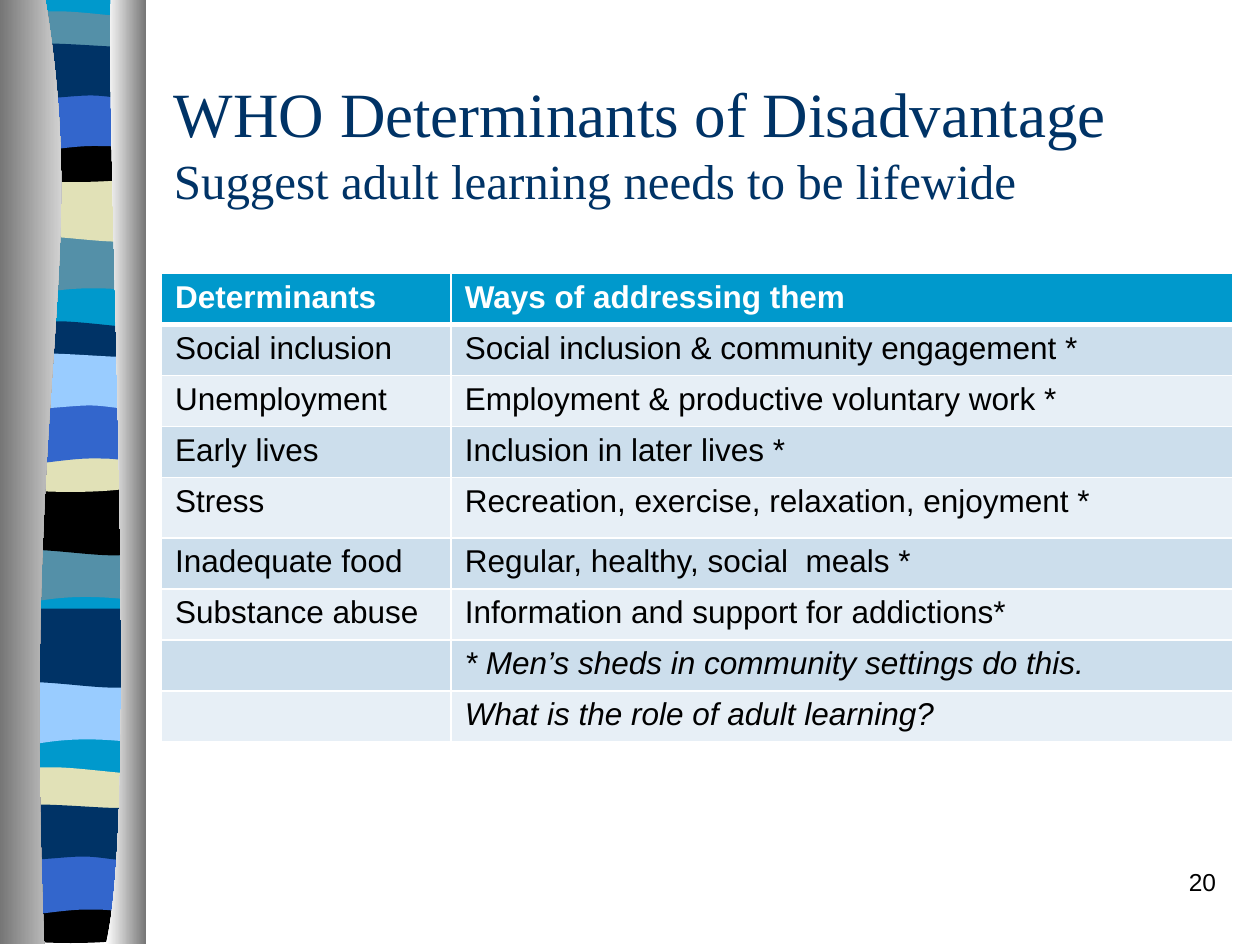
from lxml import etree
from pptx import Presentation
from pptx.dml.color import RGBColor
from pptx.enum.text import MSO_ANCHOR, MSO_AUTO_SIZE, PP_ALIGN
from pptx.oxml.ns import qn
from pptx.util import Pt

SCALE = 9144
SWELL = 5
MIDDLE = MSO_ANCHOR.MIDDLE
FIXED = MSO_AUTO_SIZE.NONE
LEFT = PP_ALIGN.LEFT
RIGHT = PP_ALIGN.RIGHT
SERIF = "Times New Roman"
SANS = "Arial"
COLORS = {
    "navy": "003366", "blue": "3366CC", "sky": "99CCFF", "cyan": "0099CC",
    "teal": "5490A8", "cream": "E1E1B7", "black": "000000", "white": "FFFFFF",
    "gray": "767676", "odd": "CCDEEC", "even": "E7EFF6",
}
BANDS = {
    "fall": [(108, 0), (108, 47), (33, 39, 18, 55, 0, 47), (0, 0)],
    "rise": [(108, -4), (108, 47), (90, 55, 33, 42, 0, 47), (0, -4)],
    "lens": [(108, 4), (108, 29), (90, 33, 18, 33, 0, 29), (0, 4),
             (7, 0, 23, 0, 41, 0), (59, 0, 94, 4, 108, 4)],
    "dip": [(108, 0), (108, 33), (90, 38, 18, 38, 0, 33), (0, 0),
            (66, 5, 85, 0, 108, 0)],
    "hill": [(108, 0), (108, 47), (92, 42, 85, 42, 67, 42),
             (49, 42, 17, 47, 0, 47), (0, 0)],
    "wave": [(108, 5), (108, 36), (101, 41, 84, 36, 66, 36),
             (48, 36, 11, 41, 0, 36), (0, 5), (15, 0, 73, 5, 91, 5),
             (109, 5, 105, 5, 108, 5)],
}
GROUPS = [
    [(6, 181, "teal"), (6, 138, "cream"), (6, 14, "teal"),
     (6, 103, "black"), (6, 70, "blue"), (6, 36, "navy")],
    [(0, 426, "teal"), (2, 387, "black"), (5, 260, "navy"),
     (2, 349, "cream"), (5, 318, "blue"), (5, 282, "sky")],
    [(1, 539, "sky"), (3, 492, "navy"), (2, 614, "cream"),
     (2, 707, "black"), (1, 676, "blue"), (0, 640, "navy")],
]
BASE = [(114, 0), (114, 744), (6, 744), (6, 0)]
EDGE = [(36, 0), (72, 216, 17, 296, 35, 749), (0, 749), (0, 0)]
RIM = [(88, 0), (84, 125, 111, 646, 84, 749), (116, 749), (116, 0)]
ROWS = [
    ("Determinants", "Ways of addressing them"),
    ("Social inclusion", "Social inclusion & community engagement *"),
    ("Unemployment", "Employment & productive voluntary work *"),
    ("Early lives", "Inclusion in later lives *"),
    ("Stress", "Recreation, exercise, relaxation, enjoyment *"),
    ("Inadequate food", "Regular, healthy, social  meals *"),
    ("Substance abuse", "Information and support for addictions*"),
    ("", "* Men’s sheds in community settings do this."),
    ("", "What is the role of adult learning?"),
]
TALL = 4
NOTES = 7


def px(n):
    return round(n * SCALE)


def rgb(name):
    return RGBColor.from_string(COLORS[name])


def bend(shape, parts):
    lines = iter(list(shape.element.iter(qn("a:lnTo"))))
    for part in parts:
        first = next(lines)
        if len(part) == 2:
            continue
        curve = etree.Element(qn("a:cubicBezTo"))
        first.addprevious(curve)
        for line in (first, next(lines), next(lines)):
            curve.append(line[0])
            line.getparent().remove(line)


class Deck:
    def __init__(self):
        self.file = Presentation()
        self.file.slide_width, self.file.slide_height = px(1000), px(750)
        self.slide = self.file.slides.add_slide(self.file.slide_layouts[5])

    def run(self, para, text, size, color, font=SANS, bold=False, italic=False):
        run = para.add_run()
        run.text = text
        style = run.font
        style.name, style.size = font, Pt(size)
        style.bold, style.italic = bold, italic
        style.color.rgb = rgb(color)

    def free(self, path, *fill, x=0, y=0):
        points = [(px(x + part[i]), px(y + part[i + 1]))
                  for part in path for i in range(0, len(part), 2)]
        pen = self.slide.shapes.build_freeform(*points[0], scale=1)
        pen.add_line_segments(points[1:], close=True)
        shape = pen.convert_to_shape()
        bend(shape, path[1:])
        shape.shadow.inherit = False
        shape.line.fill.background()
        if len(fill) == 1:
            shape.fill.solid()
            shape.fill.fore_color.rgb = rgb(fill[0])
        else:
            shape.fill.gradient()
            shape.fill.gradient_angle = 0
            for stop, name, place in zip(shape.fill.gradient_stops, fill, (0, 1)):
                stop.color.rgb = rgb(name)
                stop.position = place
        return shape

    def band(self, path, x, y, color):
        shape = self.free(path, color, x=x, y=y)
        shape.top -= px(SWELL)
        shape.height += px(2 * SWELL)

    def title(self, x, y, w, h, lines):
        shape = self.slide.shapes.title
        shape.left, shape.top, shape.width, shape.height = map(px, (x, y, w, h))
        frame = shape.text_frame
        frame.auto_size, frame.vertical_anchor = FIXED, MIDDLE
        para = frame.paragraphs[0]
        para.alignment = LEFT
        for i, (text, size) in enumerate(lines):
            if i:
                para.add_line_break()
            self.run(para, text, size, "navy", SERIF)

    def text(self, x, y, w, h, text, size):
        box = self.slide.shapes.add_textbox(*map(px, (x, y, w, h)))
        box.text_frame.word_wrap = True
        para = box.text_frame.paragraphs[0]
        para.alignment = RIGHT
        self.run(para, text, size, "black")

    def border(self, cell, head):
        props = cell._tc.get_or_add_tcPr()
        for i, side in enumerate(("lnL", "lnR", "lnT", "lnB")):
            width = Pt(3 if head and side == "lnB" else 1)
            line = etree.Element(qn("a:" + side), w=str(width))
            fill = etree.SubElement(line, qn("a:solidFill"))
            etree.SubElement(fill, qn("a:srgbClr"), val=COLORS["white"])
            props.insert(i, line)

    def table(self, x, y, cols, high, tall):
        frame = self.slide.shapes.add_table(
            len(ROWS), len(cols), *map(px, (x, y, sum(cols), high)))
        grid = frame.table
        for col, wide in zip(grid.columns, cols):
            col.width = px(wide)
        even = (high - tall) / (len(ROWS) - 1)
        for r, texts in enumerate(ROWS):
            grid.rows[r].height = px(tall if r == TALL else even)
            head = r == 0
            fill = "cyan" if head else "odd" if r % 2 else "even"
            for c, text in enumerate(texts):
                cell = grid.cell(r, c)
                cell.margin_left = cell.margin_right = px(11)
                cell.margin_top = cell.margin_bottom = px(5)
                cell.fill.solid()
                cell.fill.fore_color.rgb = rgb(fill)
                self.border(cell, head)
                if text:
                    self.run(cell.text_frame.paragraphs[0], text, 18,
                             "white" if head else "black",
                             bold=head, italic=r >= NOTES)


def main():
    deck = Deck()
    deck.free(BASE, "cyan")
    for group in GROUPS:
        for path, place in zip(BANDS.values(), group):
            deck.band(path, *place)
    deck.free(EDGE, "gray", "white")
    deck.free(RIM, "white", "gray")
    deck.title(128, 50, 850, 125, [
        ("WHO Determinants of Disadvantage", 36),
        ("Suggest adult learning needs to be lifewide", 28),
    ])
    deck.table(128, 217, (230, 620), 372, 48)
    deck.text(767, 683, 208, 50, "20", 14)
    deck.file.save("out.pptx")


if __name__ == "__main__":
    main()
